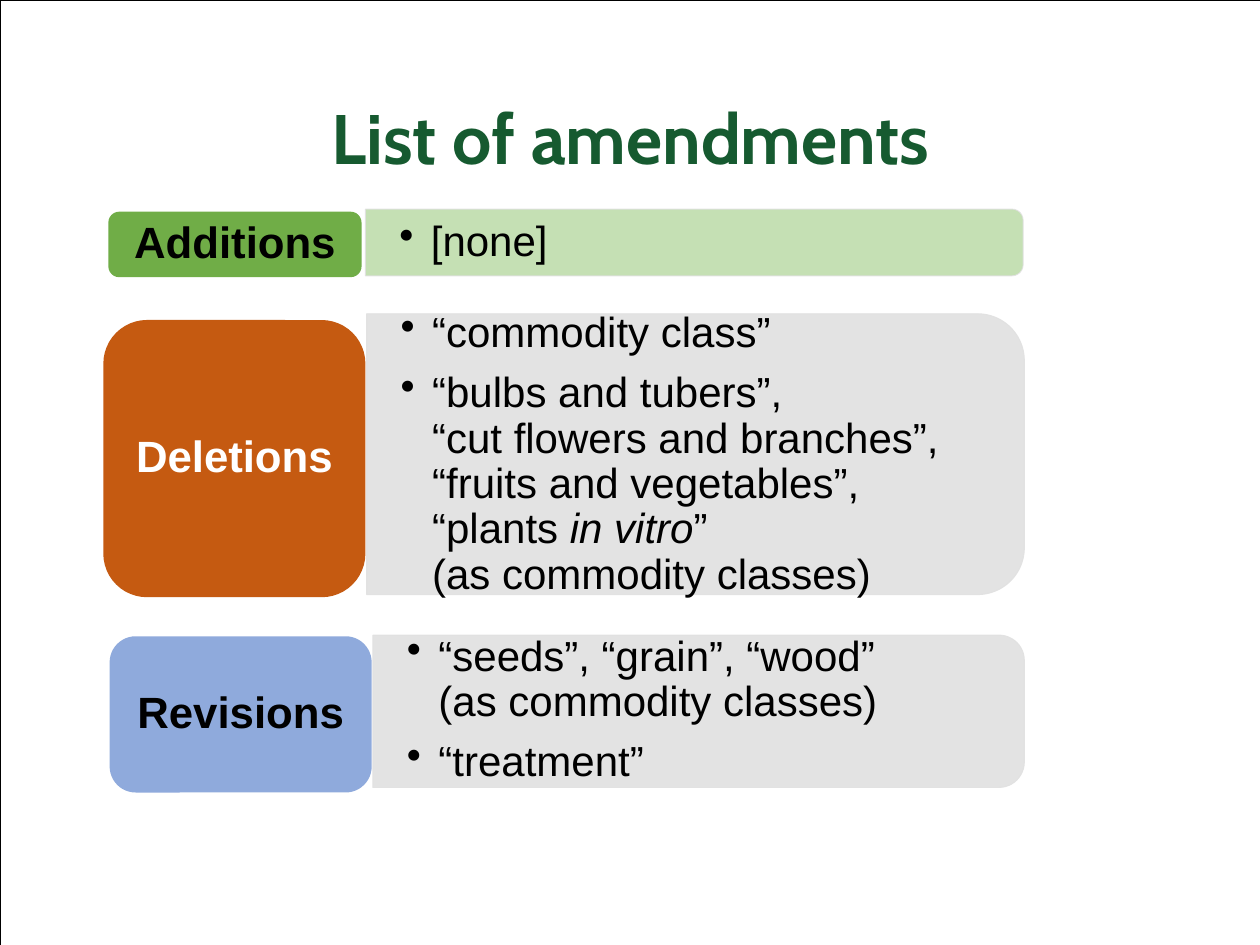
"""Build the "List of amendments" slide."""
from dataclasses import dataclass

import pptx
import pptx.dml.color
import pptx.enum.shapes
import pptx.enum.text
import pptx.oxml
import pptx.oxml.ns
import pptx.util

Inches, Pt = pptx.util.Inches, pptx.util.Pt
RGB = pptx.dml.color.RGBColor.from_string
SHAPE = pptx.enum.shapes.MSO_SHAPE
ALIGN = pptx.enum.text.PP_ALIGN
ANCHOR = pptx.enum.text.MSO_ANCHOR
NS = pptx.oxml.ns.nsdecls("a")


@dataclass(frozen=True)
class Theme:
    heading: str = "Cabin"
    body: str = "Arial"
    title_size: int = 40
    label_size: int = 25
    item_size: int = 24
    green: str = "165A30"
    black: str = "000000"
    white: str = "FFFFFF"
    grey: str = "E1E1E1"
    pale_green: str = "C5E0B4"
    leaf: str = "70AD47"
    orange: str = "C55A11"
    blue: str = "8FAADC"


T = Theme()


def add_text(s, box, paragraphs, size, color=T.black, font=T.body, bold=False,
             bullet=False, anchor=ANCHOR.MIDDLE, inset=(0.1, 0.05)):
    tf = s.shapes.add_textbox(*map(Inches, box)).text_frame
    tf.word_wrap = True
    tf.vertical_anchor = anchor
    tf.margin_left = tf.margin_right = Inches(inset[0])
    tf.margin_top = tf.margin_bottom = Inches(inset[1])
    for i, runs in enumerate(paragraphs):
        p = tf.add_paragraph() if i else tf.paragraphs[0]
        p.alignment = ALIGN.LEFT if bullet else ALIGN.CENTER
        p.line_spacing = 0.9
        if i:
            p.space_before = Pt(8.3)
        if bullet:
            pPr = p._p.get_or_add_pPr()
            pPr.set("marL", str(Inches(0.25)))
            pPr.set("indent", str(-Inches(0.25)))
            pPr.append(pptx.oxml.parse_xml(f'<a:buChar {NS} char="•"/>'))
        for text, italic in runs:
            for j, line in enumerate(text.split("\n")):
                if j:
                    p.add_line_break()
                if line:
                    r = p.add_run()
                    r.text = line
                    r.font.name, r.font.size = font, Pt(size)
                    r.font.bold, r.font.italic = bold, italic
                    r.font.color.rgb = RGB(color)


def add_box(s, kind, box, fill=None, line=None, width=0.5, fill_alpha=100, line_alpha=100):
    sp = s.shapes.add_shape(kind, *map(Inches, box))
    sp.shadow.inherit = False
    for part, color, alpha in ((sp.fill, fill, fill_alpha), (sp.line.fill, line, line_alpha)):
        if not color:
            part.background()
            continue
        part.solid()
        part.fore_color.rgb = RGB(color)
        if alpha < 100:
            clr = part._xPr.find(".//" + pptx.oxml.ns.qn("a:srgbClr"))
            clr.append(pptx.oxml.parse_xml(f'<a:alpha {NS} val="{alpha * 1000}"/>'))
    if line:
        sp.line.width = Pt(width)
    return sp


prs = pptx.Presentation()
prs.slide_width, prs.slide_height = Inches(10), Inches(7.5)
s = prs.slides.add_slide(prs.slide_layouts[6])

add_box(s, SHAPE.RECTANGLE, (0, 0, 10, 7.5), line=T.black, width=0.25)
add_text(s, (1.03, 0.78, 7.95, 0.76), [[("List of amendments", False)]], T.title_size,
         color=T.green, font=T.heading, bold=True, anchor=ANCHOR.TOP)

sections = [
    dict(label="Additions", color=T.black, fill=T.leaf, panel_fill=T.pale_green, alpha=100,
         tab=(0.86, 1.68, 2.01, 0.52), pad=0.02, panel=(2.9, 1.66, 5.22, 0.53),
         text_box=(2.9, 1.69, 5.2, 0.48), items=[[("[none]", False)]]),
    dict(label="Deletions", color=T.white, fill=T.orange, panel_fill=T.grey, alpha=90,
         tab=(0.82, 2.54, 2.08, 2.2), pad=0.1, panel=(2.91, 2.49, 5.22, 2.23),
         text_box=(2.91, 2.6, 5.12, 2.02),
         items=[[("“commodity class”", False)],
                [("“bulbs and tubers”,\n“cut flowers and branches”,\n"
                  "“fruits and vegetables”,\n“plants ", False),
                 ("in vitro", True), ("”\n(as commodity classes)", False)]]),
    dict(label="Revisions", color=T.black, fill=T.blue, panel_fill=T.grey, alpha=90,
         tab=(0.87, 5.05, 2.08, 1.24), pad=0.06, panel=(2.96, 5.04, 5.17, 1.21),
         text_box=(2.96, 5.09, 5.12, 1.09),
         items=[[("“seeds”, “grain”, “wood”\n(as commodity classes)", False)],
                [("“treatment”", False)]]),
]

for sec in sections:
    x, y, w, h = sec["panel"]
    upright = (x + (w - h) / 2, y + (h - w) / 2, h, w)
    sp = add_box(s, SHAPE.ROUND_2_SAME_RECTANGLE, upright, sec["panel_fill"], T.grey,
                 fill_alpha=sec["alpha"], line_alpha=90)
    sp.rotation = 90
    add_text(s, sec["text_box"], sec["items"], T.item_size, bullet=True, inset=(0.27, 0.14))

    x, y, w, h = sec["tab"]
    pad = sec["pad"]
    add_box(s, SHAPE.ROUNDED_RECTANGLE, sec["tab"], sec["fill"])
    add_text(s, (x + pad, y + pad, w - 2 * pad, h - 2 * pad), [[(sec["label"], False)]],
             T.label_size, color=sec["color"], bold=True)

prs.save("out.pptx")
